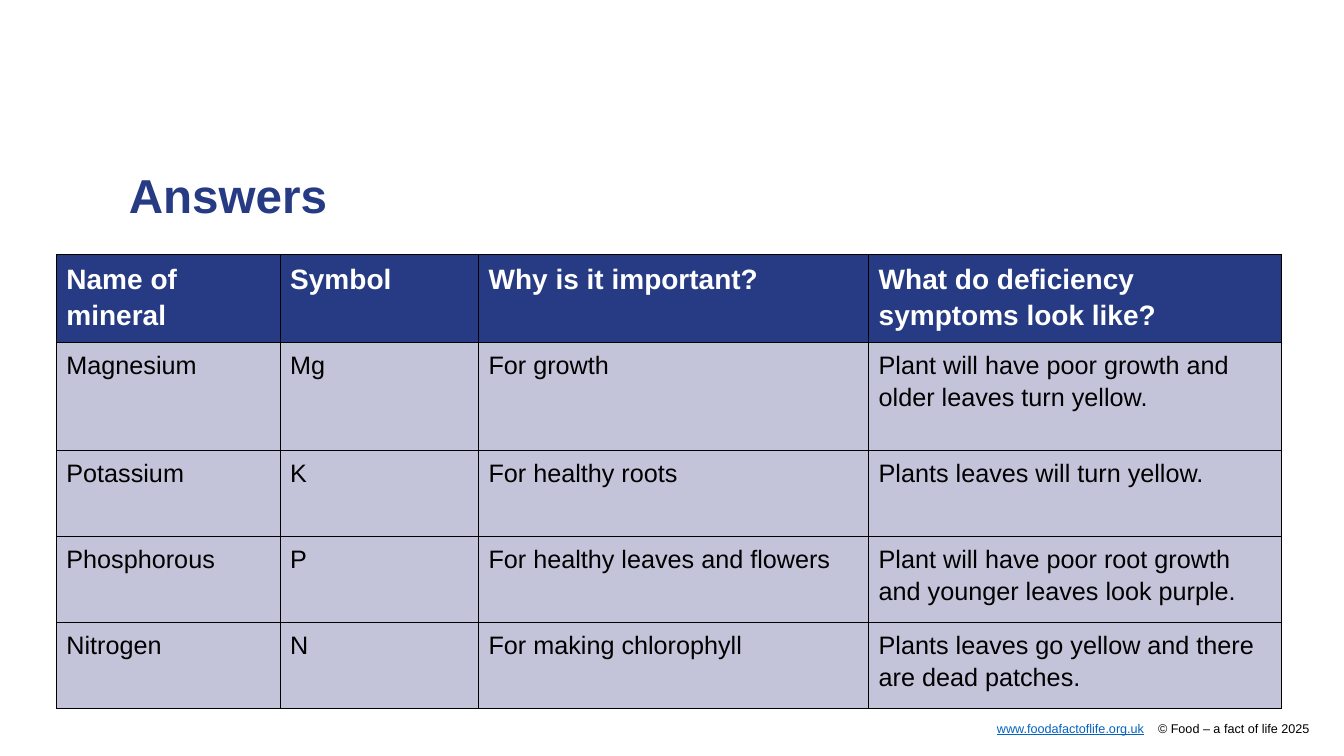
from dataclasses import dataclass

from lxml.etree import SubElement
from pptx import Presentation
from pptx.dml.color import RGBColor as Rgb
from pptx.enum.text import PP_ALIGN as Align
from pptx.oxml.ns import qn
from pptx.util import Cm, Pt


@dataclass(frozen=True)
class Theme:
    font: str = "Arial"
    navy: str = "263B83"
    lilac: str = "C3C4D9"
    white: str = "FFFFFF"
    black: str = "000000"
    link: str = "0563C1"
    title_size: int = 34
    header_size: int = 20
    body_size: int = 18
    footer_size: int = 9


class SlideBuilder:
    def __init__(self, page, theme):
        self.page = page
        self.theme = theme

    def style(self, font, size, color, bold=False):
        font.name = self.theme.font
        font.size = Pt(size)
        font.bold = bold
        font.color.rgb = Rgb.from_string(color)

    def text_box(self, left, top, width, height):
        box = self.page.shapes.add_textbox(Cm(left), Cm(top), Cm(width), Cm(height))
        frame = box.text_frame
        frame.word_wrap = True
        frame.margin_left = frame.margin_right = 0
        frame.margin_top = frame.margin_bottom = 0
        return frame.paragraphs[0]

    def title(self, text, left, top, width, height):
        para = self.text_box(left, top, width, height)
        para.text = text
        para.line_spacing = 0.9
        self.style(para.font, self.theme.title_size, self.theme.navy, bold=True)

    def footer(self, address, notice, left, top, width, height):
        para = self.text_box(left, top, width, height)
        para.alignment = Align.RIGHT
        self.style(para.font, self.theme.footer_size, self.theme.black)
        address_span = para.add_run()
        address_span.text = address
        address_span.font.underline = True
        address_span.font.color.rgb = Rgb.from_string(self.theme.link)
        gap_span = para.add_run()
        gap_span.text = " "
        gap_span._r.get_or_add_rPr().set("spc", "750")
        para.add_run().text = notice

    def borders(self, cell):
        properties = cell._tc.get_or_add_tcPr()
        for side in ("a:lnL", "a:lnR", "a:lnT", "a:lnB"):
            line = SubElement(properties, qn(side), w=str(Pt(1)))
            fill = SubElement(line, qn("a:solidFill"))
            SubElement(fill, qn("a:srgbClr"), val=self.theme.black)

    def cell(self, cell, text, is_header):
        theme = self.theme
        self.borders(cell)
        cell.fill.solid()
        cell.fill.fore_color.rgb = Rgb.from_string(theme.navy if is_header else theme.lilac)
        cell.text = text
        para = cell.text_frame.paragraphs[0]
        para.line_spacing = 1.15
        if is_header:
            para.space_after = Pt(10)
            self.style(para.font, theme.header_size, theme.white, bold=True)
        else:
            self.style(para.font, theme.body_size, theme.black)

    def table(self, rows, left, top, widths, heights):
        table = self.page.shapes.add_table(
            len(rows), len(widths), Cm(left), Cm(top), Cm(sum(widths)), Cm(sum(heights))
        ).table
        for column, width in zip(table.columns, widths):
            column.width = Cm(width)
        for row_index, (texts, height) in enumerate(zip(rows, heights)):
            table.rows[row_index].height = Cm(height)
            for column_index, text in enumerate(texts):
                self.cell(table.cell(row_index, column_index), text, row_index == 0)


MINERALS = [
    ("Name of mineral", "Symbol", "Why is it important?",
     "What do deficiency symptoms look like?"),
    ("Magnesium", "Mg", "For growth",
     "Plant will have poor growth and older leaves turn yellow."),
    ("Potassium", "K", "For healthy roots", "Plants leaves will turn yellow."),
    ("Phosphorous", "P", "For healthy leaves and flowers",
     "Plant will have poor root growth and younger leaves look purple."),
    ("Nitrogen", "N", "For making chlorophyll",
     "Plants leaves go yellow and there are dead patches."),
]


def main():
    deck = Presentation()
    deck.slide_width = Cm(33.87)
    deck.slide_height = Cm(19.05)
    page = deck.slides.add_slide(deck.slide_layouts[6])
    builder = SlideBuilder(page, Theme())
    builder.footer("www.foodafactoflife.org.uk", "© Food – a fact of life 2025",
                   3.2, 18.16, 29.8, 0.38)
    builder.title("Answers", 3.25, 4.34, 27, 2)
    builder.table(MINERALS, 1.42, 6.42, widths=[5.64, 5, 9.83, 10.41],
                  heights=[2.07, 2.72] + [2.17] * 3)
    deck.save("out.pptx")


if __name__ == "__main__":
    main()
